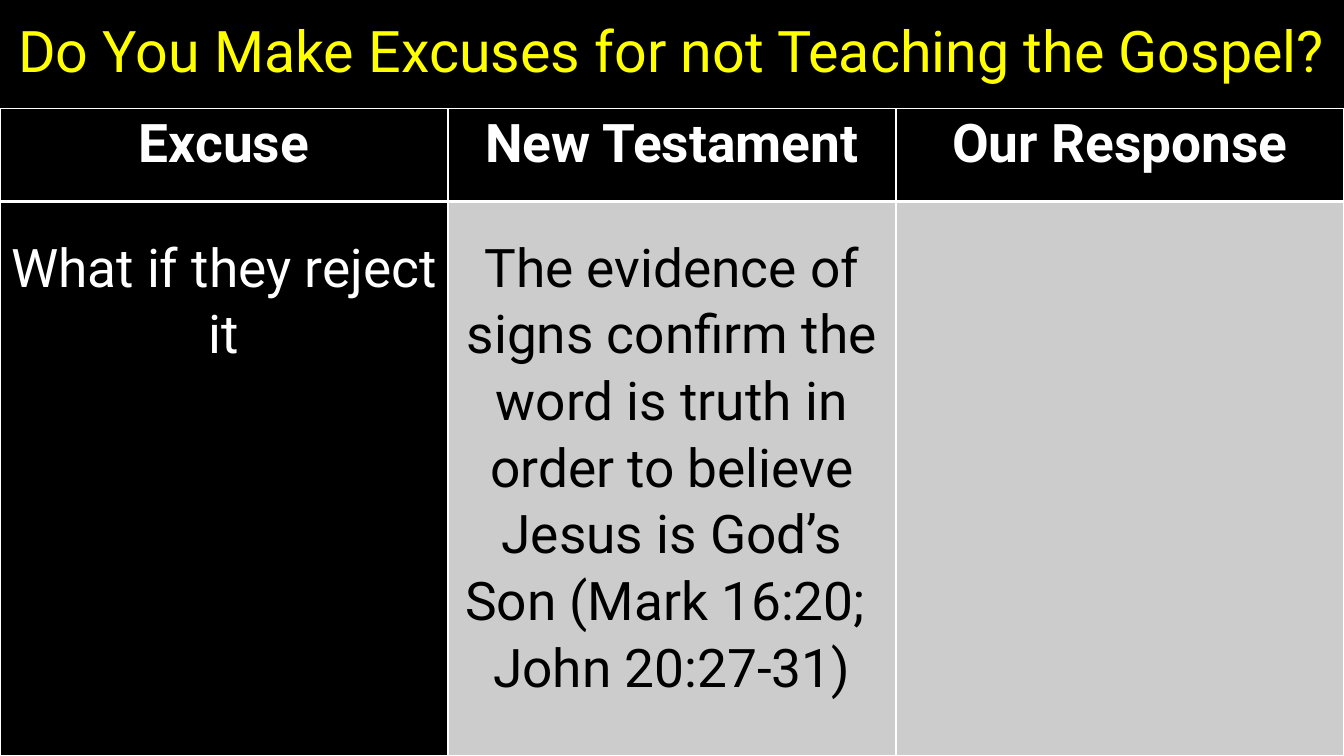
from lxml.etree import SubElement as Sub
from pptx import Presentation as Deck
from pptx.dml.color import RGBColor as Rgb
from pptx.enum.text import MSO_ANCHOR as Anchor, MSO_AUTO_SIZE as Fit, PP_ALIGN as Align
from pptx.oxml.ns import qn
from pptx.util import Cm, Pt

BLACK, WHITE, GREY, YELLOW = "000000", "FFFFFF", "CCCCCC", "FFFF00"
WIDE, HIGH, TOP, HEAD = 33.87, 19.05, 2.74, 2.34
ROWS = [
    ["Excuse", "New Testament", "Our Response"],
    [
        "What if they reject it",
        "The evidence of signs confirm the word is truth in order to believe "
        "Jesus is God’s Son (Mark 16:20; \nJohn 20:27-31)",
        "",
    ],
]


def paint(fill, color):
    fill.solid()
    fill.fore_color.rgb = Rgb.from_string(color)


def write(frame, text, size=38, color=WHITE, bold=False, space=1.07):
    frame.word_wrap = True
    frame.text = text
    for para in frame.paragraphs:
        para.alignment = Align.CENTER
        para.line_spacing = space
        font = para.font
        for run in para.runs:
            font = run.font
            font.name = "Roboto"
            font.size = Pt(size)
            font.bold = bold
            font.color.rgb = Rgb.from_string(color)


class Board:
    def __init__(self, deck):
        self.slide = deck.slides.add_slide(deck.slide_layouts[5])
        paint(self.slide.background.fill, BLACK)

    def title(self, text):
        shape = self.slide.shapes.title
        shape.left, shape.top = Cm(0), Cm(0)
        shape.width, shape.height = Cm(WIDE), Cm(TOP)
        frame = shape.text_frame
        frame.auto_size = Fit.NONE
        frame.vertical_anchor = Anchor.MIDDLE
        write(frame, text, size=41, color=YELLOW, space=0.9)

    def edge(self, cell, widths):
        props = cell._tc.get_or_add_tcPr()
        for spot, (side, width) in enumerate(widths.items()):
            line = Sub(props, qn("a:ln" + side), w=str(Pt(width)))
            fill = Sub(line, qn("a:solidFill"))
            Sub(fill, qn("a:srgbClr"), val=WHITE)
            props.insert(spot, line)

    def cell(self, cell, text, row, col):
        head = row == 0
        dark = head or col == 0
        paint(cell.fill, BLACK if dark else GREY)
        cell.margin_left = cell.margin_right = Cm(0.18)
        cell.margin_top = Cm(0 if head else 0.8)
        cell.margin_bottom = Cm(0)
        if text:
            write(cell.text_frame, text, color=WHITE if dark else BLACK, bold=head)
        self.edge(cell, {"L": 1, "R": 1, "T": 1 if head else 3, "B": 3 if head else 1})

    def table(self, rows):
        count = len(rows[0])
        frame = self.slide.shapes.add_table(
            len(rows), count, Cm(0), Cm(TOP), Cm(WIDE), Cm(HIGH - TOP)
        )
        grid = frame.table
        for col in grid.columns:
            col.width = Cm(WIDE / count)
        grid.rows[0].height = Cm(HEAD)
        grid.rows[1].height = Cm(HIGH - TOP - HEAD)
        for row, texts in enumerate(rows):
            for col, text in enumerate(texts):
                self.cell(grid.cell(row, col), text, row, col)


def main():
    deck = Deck()
    deck.slide_width, deck.slide_height = Cm(WIDE), Cm(HIGH)
    board = Board(deck)
    board.title("Do You Make Excuses for not Teaching the Gospel?")
    board.table(ROWS)
    deck.save("out.pptx")


if __name__ == "__main__":
    main()
